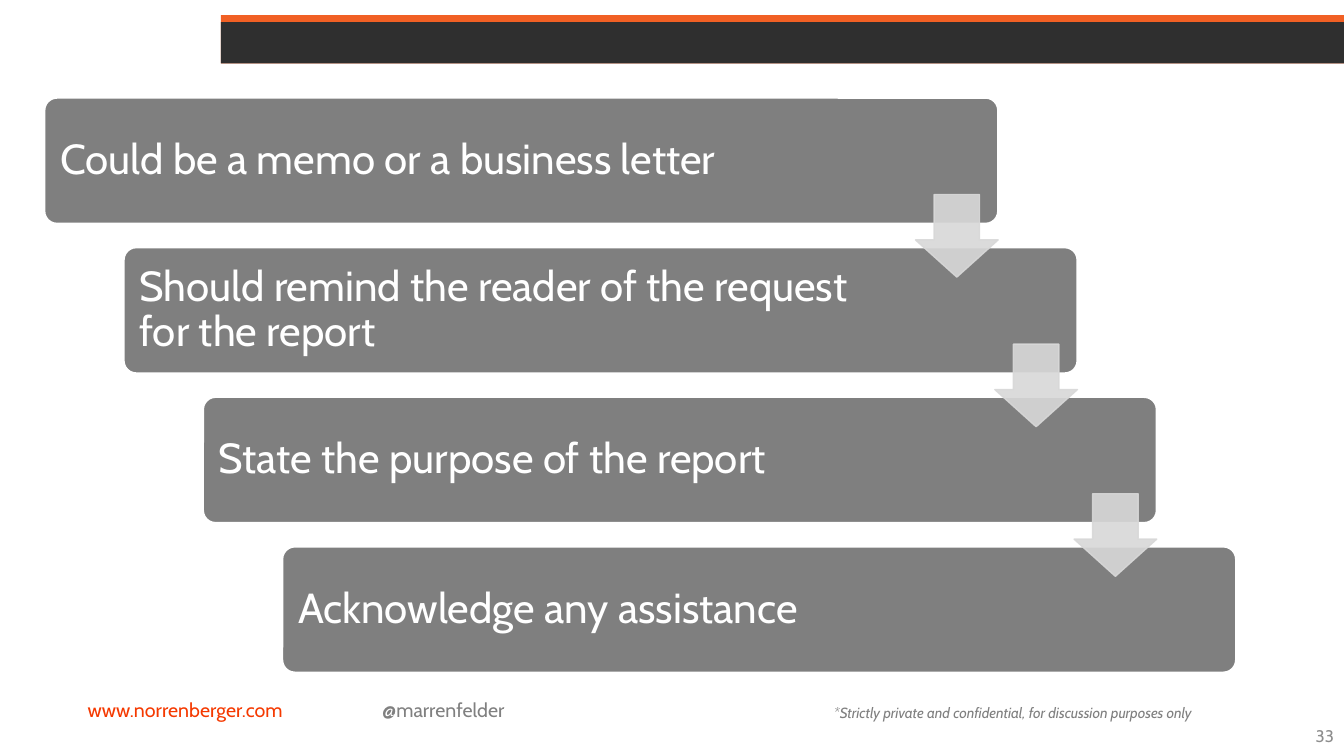
from lxml.etree import SubElement as Sub
from pptx import Presentation as Deck
from pptx.dml.color import RGBColor as Rgb
from pptx.enum.shapes import MSO_SHAPE as Kind
from pptx.enum.text import MSO_ANCHOR as Anchor, PP_ALIGN as Align
from pptx.oxml.ns import qn
from pptx.util import Inches, Pt

WIDE, HIGH = Inches(13.33), Inches(7.5)
FONT = "Cabin"
INK = {
    "white": "FFFFFF",
    "orange": "F16024",
    "dark": "2F2F2F",
    "red": "F53900",
    "grey": "808080",
    "step": "7F7F7F",
    "page": "8E8E8E",
    "arrow": "D8D8D8",
}
STEPS = [
    "Could be a memo or a business letter",
    "Should remind the reader of the request for the report",
    "State the purpose of the report",
    "Acknowledge any assistance",
]
SHIFT, DROP = 5.9, 19.79


def place(left, top, width, height):
    return (int(WIDE * left / 100), int(HIGH * top / 100),
            int(WIDE * width / 100), int(HIGH * height / 100))


def tint(name):
    return Rgb.from_string(INK[name])


def fade(fill, share):
    color = fill._xPr.find(qn("a:solidFill"))[0]
    Sub(color, qn("a:alpha")).set("val", str(share * 1000))


def shape(slide, kind, spot, fill, line=None, thick=1, adjust=(), solid=100):
    item = slide.shapes.add_shape(kind, *place(*spot))
    item.shadow.inherit = False
    for index, value in enumerate(adjust):
        item.adjustments[index] = value
    item.fill.solid()
    item.fill.fore_color.rgb = tint(fill)
    if line:
        item.line.color.rgb = tint(line)
        item.line.width = Pt(thick)
    else:
        item.line.fill.background()
    if solid < 100:
        fade(item.fill, solid)
        fade(item.line.fill, solid)


def label(slide, spot, words, size, color, inset=0.05, wrap=False,
          anchor=Anchor.TOP, align=Align.LEFT, space=1.0, slant=False):
    frame = slide.shapes.add_textbox(*place(*spot)).text_frame
    frame.word_wrap = wrap
    frame.vertical_anchor = anchor
    frame.margin_left = frame.margin_right = Inches(inset)
    frame.margin_top = frame.margin_bottom = Inches(inset)
    para = frame.paragraphs[0]
    para.alignment = align
    para.line_spacing = space
    run = para.add_run()
    run.text = words
    run.font.name = FONT
    run.font.size = Pt(size)
    run.font.italic = slant
    run.font.color.rgb = tint(color)


def footer(slide):
    label(slide, (6.15, 91.6, 16.58, 4.53), "www.norrenberger.com", 14, "red")
    label(slide, (28.06, 91.6, 10.35, 4.53), "@marrenfelder", 14, "grey")
    label(slide, (61.67, 92.4, 28.51, 4.53),
          "*Strictly private and confidential, for discussion purposes only",
          10.5, "step", slant=True)
    label(slide, (96.4, 94.67, 3.6, 5.33), "33", 12, "page", inset=0.1,
          wrap=True, anchor=Anchor.MIDDLE, align=Align.RIGHT)


def header(slide):
    shape(slide, Kind.RECTANGLE, (16.43, 2, 83.57, 6.4), "orange")
    shape(slide, Kind.RECTANGLE, (16.43, 2.93, 83.57, 5.47), "dark")


def stairs(slide):
    for index, words in enumerate(STEPS):
        left, top = 3.3 + index * SHIFT, 12.93 + index * DROP
        shape(slide, Kind.ROUNDED_RECTANGLE, (left, top, 70.97, 16.67),
              "step", "white", 1.5, (0.1,))
        label(slide, (left + 0.28, top + 0.5, 58.4, 15.73), words, 30, "white",
              inset=0.12, wrap=True, anchor=Anchor.MIDDLE, space=0.9)
    for index in range(len(STEPS) - 1):
        spot = (68.12 + index * SHIFT, 25.73 + index * DROP, 6.15, 10.93)
        shape(slide, Kind.DOWN_ARROW, spot, "arrow", "arrow", 1,
              (0.55, 0.45), 90)


def main():
    deck = Deck()
    deck.slide_width, deck.slide_height = WIDE, HIGH
    slide = deck.slides.add_slide(deck.slide_layouts[6])
    header(slide)
    footer(slide)
    stairs(slide)
    deck.save("out.pptx")


if __name__ == "__main__":
    main()
